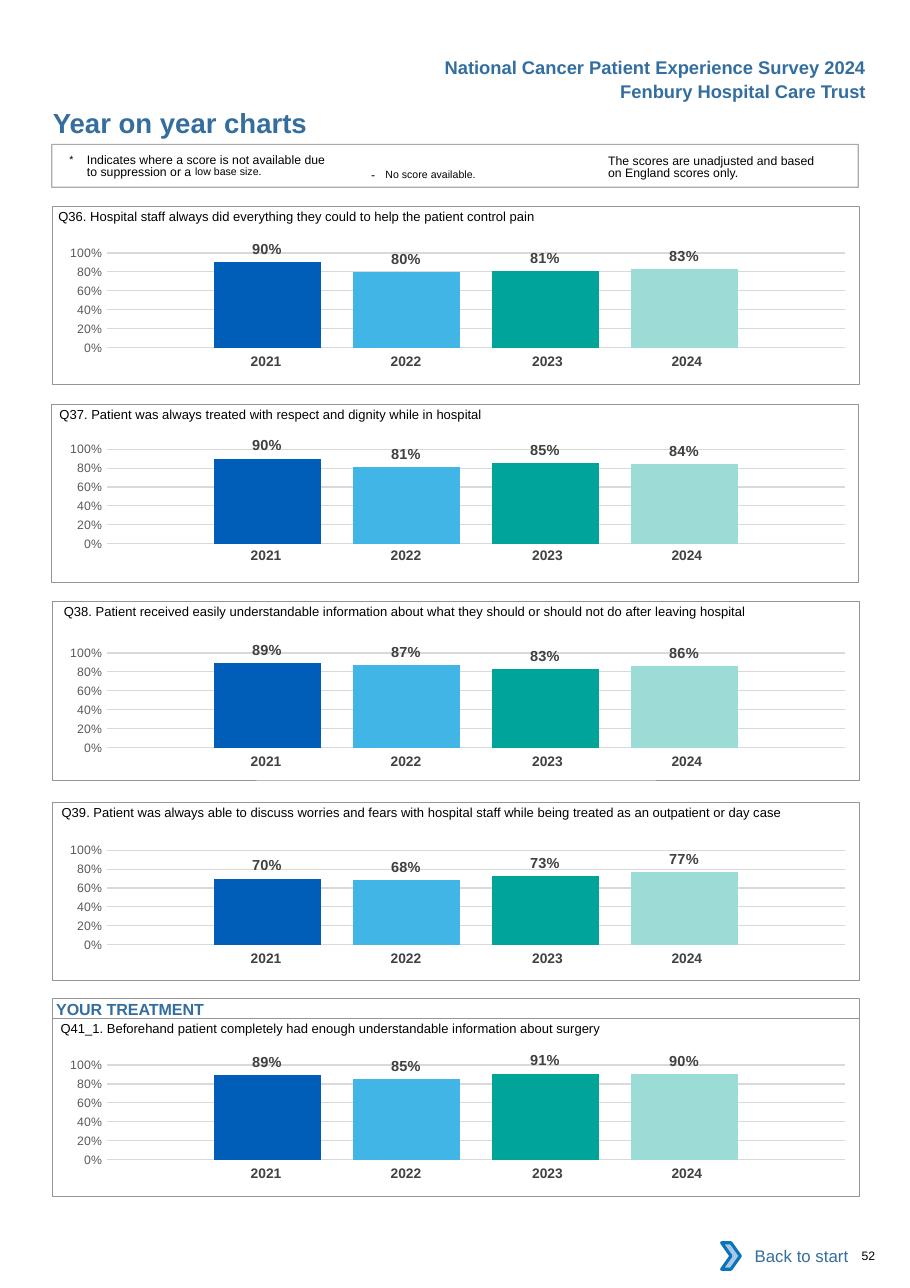
from lxml import etree
from pptx import Presentation
from pptx.chart.data import CategoryChartData
from pptx.dml.color import RGBColor
from pptx.enum.chart import XL_CHART_TYPE, XL_LABEL_POSITION, XL_TICK_MARK
from pptx.enum.shapes import MSO_SHAPE
from pptx.enum.text import MSO_ANCHOR, PP_ALIGN
from pptx.oxml import parse_xml
from pptx.oxml.ns import nsdecls, qn
from pptx.util import Inches, Pt

BLACK, WHITE = RGBColor(0, 0, 0), RGBColor(255, 255, 255)
HEADING_BLUE = RGBColor(0x33, 0x6E, 0x9F)
FRAME_GREY = RGBColor(0x93, 0x95, 0x98)
GRID_GREY = RGBColor(0xD9, 0xD9, 0xD9)
AXIS_GREY = RGBColor(0x59, 0x59, 0x59)
LABEL_GREY = RGBColor(0x40, 0x40, 0x40)
YEAR_GREY = RGBColor(0x41, 0x40, 0x42)
ARROW_FILL, ARROW_LINE = RGBColor(0xA8, 0xC7, 0xE9), RGBColor(0x0A, 0x74, 0xBB)

# year, bar colour, column width, right margin of the cell
YEARS = [
    ("2021", RGBColor(0x00, 0x5E, 0xB8), 1.27, 0),
    ("2022", RGBColor(0x41, 0xB6, 0xE6), 1.27, 0),
    ("2023", RGBColor(0x00, 0xA4, 0x99), 1.34, 0.04),
    ("2024", RGBColor(0x9C, 0xDC, 0xD7), 1.27, 0.12),
]
# question, scores, frame left, frame top, question left, chart top, years top
PANELS = [
    ("Q36. Hospital staff always did everything they could to help the patient control pain",
     (0.90, 0.80, 0.81, 0.83), 0.48, 1.87, 0.53, 2.11, 3.16),
    ("Q37. Patient was always treated with respect and dignity while in hospital",
     (0.90, 0.81, 0.85, 0.84), 0.47, 3.67, 0.54, 3.89, 4.92),
    ("Q38. Patient received easily understandable information about what they should "
     "or should not do after leaving hospital",
     (0.89, 0.87, 0.83, 0.86), 0.48, 5.46, 0.58, 5.74, 6.79),
    ("Q39. Patient was always able to discuss worries and fears with hospital staff "
     "while being treated as an outpatient or day case",
     (0.70, 0.68, 0.73, 0.77), 0.48, 7.28, 0.56, 7.53, 8.58),
    ("Q41_1. Beforehand patient completely had enough understandable information about surgery",
     (0.89, 0.85, 0.91, 0.90), 0.48, 9.24, 0.55, 9.48, 10.53),
]
PANEL_WIDTH, PANEL_HEIGHT, CHART_HEIGHT = 7.32, 1.62, 1.29
CHART_LEFT, YEARS_LEFT, YEARS_HEIGHT = 0.39, 1.73, 0.27
PLOT_AREA = {"x": 0.079, "y": 0.145, "w": 0.915, "h": 0.666}
NO_TABLE_STYLE = "{2D5ABB26-0587-4C30-8999-92F81FD0307C}"

SMALL = {"size": Pt(8)}
RAISED = {"size": Pt(12)}
HEADER = {"size": Pt(12), "bold": True, "color": HEADING_BLUE}
# runs (text, font, raise in %), box, margins, paragraph format, hanging indent
TEXTS = [
    ([("Year on year charts", {"size": Pt(18), "bold": True, "color": HEADING_BLUE}, 0)],
     (0.48, 0.96, 4.5, 0.3), (0, 0, 0, 0), {}, 0),
    ([("National Cancer Patient Experience Survey 2024", HEADER, 0)],
     (3.46, 0.46, 4.5, 0.3), (0.1, 0.05, 0.1, 0.05), {"alignment": PP_ALIGN.RIGHT}, 0),
    ([("Fenbury Hospital Care Trust", HEADER, 0)],
     (3.46, 0.68, 4.5, 0.3), (0.1, 0.05, 0.1, 0.05), {"alignment": PP_ALIGN.RIGHT}, 0),
    ([("*\t", RAISED, 3),
      ("Indicates where a score is not available due to suppression or a ", SMALL, 0),
      ("low base size.", RAISED, 7)],
     (0.63, 1.38, 2.37, 0.27), (0, 0.03, 0, 0), {"line_spacing": Pt(8.1)}, 0.16),
    ([("-\t", SMALL, 0), ("No score available.", RAISED, 3)],
     (3.27, 1.41, 1.83, 0.24), (0.1, 0.05, 0.1, 0.05), {}, 0.13),
    ([("The scores are unadjusted and based on England scores only.", SMALL, 0)],
     (5.52, 1.38, 1.98, 0.27), (0, 0.03, 0, 0), {"line_spacing": Pt(8.1)}, 0),
    ([("52", SMALL, 0)], (7.82, 11.33, 0.41, 0.13), (0, 0, 0, 0), {}, 0),
]


def set_values(target, values):
    for name, value in values.items():
        setattr(target, name, value)


def set_font(font, size, color=BLACK, bold=False, name="Arial"):
    set_values(font, {"size": size, "bold": bold, "name": name})
    font.color.rgb = color


def set_margins(target, margins):
    sides = ("margin_left", "margin_top", "margin_right", "margin_bottom")
    set_values(target, {side: Inches(margin) for side, margin in zip(sides, margins)})


def write(shape, runs, margins, layout, hanging=0, anchor=MSO_ANCHOR.TOP):
    frame = shape.text_frame
    set_values(frame, {"word_wrap": True, "vertical_anchor": anchor})
    set_margins(frame, margins)
    paragraph = frame.paragraphs[0]
    set_values(paragraph, {"alignment": PP_ALIGN.LEFT, **layout})
    if hanging:
        properties = paragraph._p.get_or_add_pPr()
        properties.set("marL", str(Inches(hanging)))
        properties.set("indent", str(-Inches(hanging)))
    for text, font, raised in runs:
        run = paragraph.add_run()
        run.text = text
        set_font(run.font, **font)
        if raised:
            run._r.get_or_add_rPr().set("baseline", str(raised * 1000))


def add_text(slide, runs, box, margins, layout, hanging=0):
    shape = slide.shapes.add_textbox(*map(Inches, box))
    write(shape, runs, margins, layout, hanging)


def add_box(slide, box, fill=None, line=None, width=0.5, kind=MSO_SHAPE.RECTANGLE):
    shape = slide.shapes.add_shape(kind, *map(Inches, box))
    shape.shadow.inherit = False
    for part, color in ((shape.fill, fill), (shape.line.fill, line)):
        if color is None:
            part.background()
        else:
            part.solid()
            part.fore_color.rgb = color
    if line is not None:
        shape.line.width = Pt(width)
    return shape


def add_years(slide, top):
    box = (YEARS_LEFT, top, sum(year[2] for year in YEARS), YEARS_HEIGHT)
    table = slide.shapes.add_table(1, len(YEARS), *map(Inches, box)).table
    set_values(table, {"first_row": False, "horz_banding": False})
    table._tbl.tblPr.find(qn("a:tableStyleId")).text = NO_TABLE_STYLE
    for column, (year, _, width, right) in enumerate(YEARS):
        table.columns[column].width = Inches(width)
        cell = table.cell(0, column)
        cell.fill.background()
        set_margins(cell, (0.1, 0.05, right, 0.05))
        paragraph = cell.text_frame.paragraphs[0]
        paragraph.alignment = PP_ALIGN.CENTER
        run = paragraph.add_run()
        run.text = year
        set_font(run.font, Pt(9), YEAR_GREY, True)


def add_score_chart(slide, scores, top):
    data = CategoryChartData(number_format="0%")
    data.categories = ["1"]
    for number, score in enumerate(scores, 1):
        data.add_series(f"Series {number}", [score])
    box = (CHART_LEFT, top, PANEL_WIDTH, CHART_HEIGHT)
    chart = slide.shapes.add_chart(XL_CHART_TYPE.COLUMN_CLUSTERED, *map(Inches, box), data).chart
    set_values(chart, {"has_legend": False, "has_title": False})
    set_font(chart.font, Pt(10), name="Calibri")
    chart.category_axis.visible = False

    axis = chart.value_axis
    set_values(axis, {"minimum_scale": 0, "maximum_scale": 1, "major_unit": 0.2,
                      "major_tick_mark": XL_TICK_MARK.NONE})
    set_values(axis.tick_labels, {"number_format": "0%", "number_format_is_linked": False})
    set_font(axis.tick_labels.font, Pt(8), AXIS_GREY)
    axis.format.line.fill.background()
    grid = axis.major_gridlines.format.line
    grid.color.rgb, grid.width = GRID_GREY, Pt(0.75)

    plot = chart.plots[0]
    set_values(plot, {"gap_width": 200, "overlap": -30, "vary_by_categories": False})
    for series, (_, color, _, _) in zip(plot.series, YEARS):
        series.format.fill.solid()
        series.format.fill.fore_color.rgb = color
        labels = series.data_labels
        set_values(labels, {"show_value": True, "position": XL_LABEL_POSITION.OUTSIDE_END,
                            "number_format": "0%", "number_format_is_linked": False})
        set_font(labels.font, Pt(9.5), LABEL_GREY, True)

    plot_area = chart._chartSpace.chart.plotArea
    for old in plot_area.findall(qn("c:layout")):
        plot_area.remove(old)
    modes = '<c:layoutTarget val="inner"/><c:xMode val="edge"/><c:yMode val="edge"/>'
    sizes = "".join(f'<c:{key} val="{value}"/>' for key, value in PLOT_AREA.items())
    plot_area.insert(0, parse_xml(
        f'<c:layout {nsdecls("c")}><c:manualLayout>{modes}{sizes}</c:manualLayout></c:layout>'))


def main():
    presentation = Presentation()
    set_values(presentation, {"slide_width": Inches(8.26), "slide_height": Inches(11.69)})
    slide = presentation.slides.add_slide(presentation.slide_layouts[6])

    for question, scores, left, top, text_left, chart_top, years_top in PANELS:
        add_years(slide, years_top)
        add_score_chart(slide, scores, chart_top)
        add_box(slide, (left, top, PANEL_WIDTH, PANEL_HEIGHT), line=FRAME_GREY)
        add_text(slide, [(question, {"size": Pt(8.5)}, 0)],
                 (text_left, top - 0.07, 7.2, 0.24), (0, 0.09, 0, 0), {})

    section = add_box(slide, (0.48, 9.06, PANEL_WIDTH, 0.18), line=FRAME_GREY)
    write(section, [("YOUR TREATMENT", {**HEADER, "size": Pt(10.5)}, 0)], (0.03, 0.01, 0, 0), {})

    key = add_box(slide, (0.47, 1.31, PANEL_WIDTH, 0.39), line=FRAME_GREY, width=0.75)
    line_color = key.line.fill._xPr.find(".//" + qn("a:srgbClr"))
    etree.SubElement(line_color, qn("a:alpha")).set("val", "80000")
    for text in TEXTS:
        add_text(slide, *text)

    back = add_box(slide, (6.62, 11.19, 1.18, 0.42), fill=WHITE)
    write(back, [("Back to start", {"size": Pt(11), "color": HEADING_BLUE}, 0)],
          (0.1, 0.05, 0.1, 0.05), {"alignment": PP_ALIGN.RIGHT}, anchor=MSO_ANCHOR.MIDDLE)
    add_box(slide, (6.55, 11.28, 0.17, 0.24), ARROW_FILL, ARROW_LINE, 2, MSO_SHAPE.CHEVRON)

    presentation.save("out.pptx")


if __name__ == "__main__":
    main()
